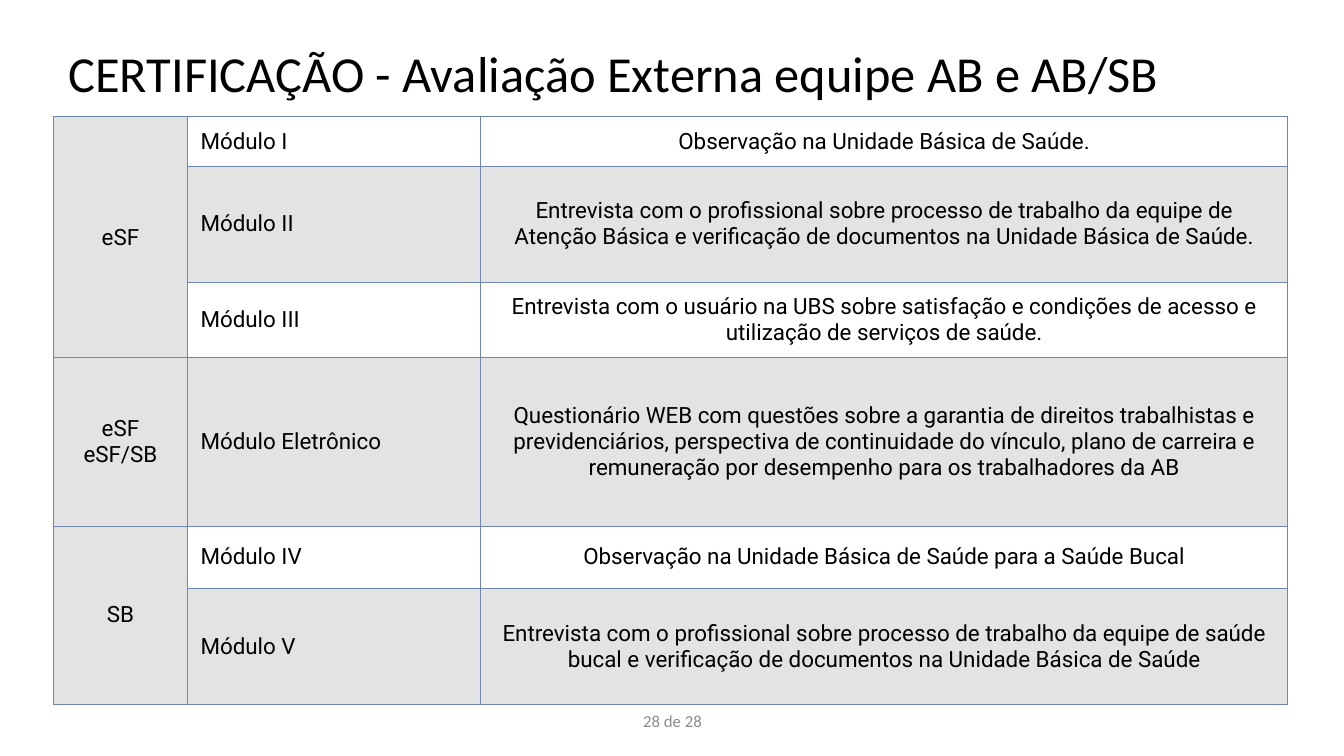
import pptx
import pptx.util
import pptx.dml.color
import pptx.enum.text
import pptx.oxml
import pptx.oxml.ns
from dataclasses import dataclass
from lxml import etree

Inches = pptx.util.Inches
Pt = pptx.util.Pt
Align = pptx.enum.text.PP_ALIGN
Anchor = pptx.enum.text.MSO_ANCHOR
qn = pptx.oxml.ns.qn


@dataclass(frozen=True)
class Theme:
    ink: str = "000000"
    muted: str = "8C8C8C"
    edge: str = "6E86B6"
    shade: int = 11  # percent of ink
    head: str = "Calibri"
    body: str = "Roboto"
    big: int = 36
    mid: int = 16
    small: int = 12


THEME = Theme()

COLS = [1.33, 2.91, 8]
ROWS = [0.49, 1.15, 0.75, 1.67, 0.62, 1.15]

# First row, row count, lines
TEAMS = [
    (0, 3, ["eSF"]),
    (3, 1, ["eSF", "eSF/SB"]),
    (4, 2, ["SB"]),
]

# Module, description; every second row is shaded
MODULES = [
    ("Módulo I", "Observação na Unidade Básica de Saúde."),
    ("Módulo II", "Entrevista com o profissional sobre processo de trabalho da "
     "equipe de Atenção Básica e verificação de documentos na Unidade Básica "
     "de Saúde."),
    ("Módulo III", "Entrevista com o usuário na UBS sobre satisfação e "
     "condições de acesso e utilização de serviços de saúde."),
    ("Módulo Eletrônico", "Questionário WEB com questões sobre a garantia de "
     "direitos trabalhistas e previdenciários, perspectiva de continuidade do "
     "vínculo, plano de carreira e remuneração por desempenho para os "
     "trabalhadores da AB"),
    ("Módulo IV", "Observação na Unidade Básica de Saúde para a Saúde Bucal"),
    ("Módulo V", "Entrevista com o profissional sobre processo de trabalho da "
     "equipe de saúde bucal e verificação de documentos na Unidade Básica de "
     "Saúde"),
]


def rgb(code):
    return pptx.dml.color.RGBColor.from_string(code)


def write(frame, lines, size, face, color, align):
    for i, line in enumerate(lines):
        para = frame.paragraphs[0] if i == 0 else frame.add_paragraph()
        para.alignment = align
        run = para.add_run()
        run.text = line
        run.font.size = Pt(size)
        run.font.name = face
        run.font.color.rgb = rgb(color)


def add_text(slide, place, text, size, color, align, anchor, pad):
    frame = slide.shapes.add_textbox(*map(Inches, place)).text_frame
    frame.word_wrap = True
    frame.vertical_anchor = anchor
    frame.margin_left = frame.margin_right = Inches(pad[0])
    frame.margin_top = frame.margin_bottom = Inches(pad[1])
    write(frame, [text], size, THEME.head, color, align)
    return frame


def add_edges(cell):
    props = cell._tc.get_or_add_tcPr()
    for side in ("lnL", "lnR", "lnT", "lnB"):
        line = etree.SubElement(props, qn("a:" + side), w=str(Pt(0.75)))
        fill = etree.SubElement(line, qn("a:solidFill"))
        etree.SubElement(fill, qn("a:srgbClr"), val=THEME.edge)


def paint(cell, shaded):
    if not shaded:
        cell.fill.background()
        return
    cell.fill.solid()
    cell.fill.fore_color.rgb = rgb(THEME.ink)
    color = cell._tc.tcPr.find(qn("a:solidFill")).find(qn("a:srgbClr"))
    etree.SubElement(color, qn("a:alpha"), val=str(THEME.shade * 1000))


def fill_cell(cell, lines, align):
    cell.vertical_anchor = Anchor.MIDDLE
    cell.margin_left = cell.margin_right = Inches(0.13)
    cell.margin_top = cell.margin_bottom = Inches(0.1)
    write(cell.text_frame, lines, THEME.mid, THEME.body, THEME.ink, align)


def add_grid(slide, left, top):
    table = slide.shapes.add_table(
        len(ROWS), len(COLS), Inches(left), Inches(top),
        Inches(sum(COLS)), Inches(sum(ROWS))).table
    table.first_row = table.horz_banding = False
    for col, width in zip(table.columns, COLS):
        col.width = Inches(width)
    for row, height in zip(table.rows, ROWS):
        row.height = Inches(height)

    # Borders and shading
    for r in range(len(ROWS)):
        for c in range(len(COLS)):
            cell = table.cell(r, c)
            add_edges(cell)
            paint(cell, c == 0 or r % 2 == 1)

    # Teams
    for start, count, lines in TEAMS:
        cell = table.cell(start, 0)
        if count > 1:
            cell.merge(table.cell(start + count - 1, 0))
        fill_cell(cell, lines, Align.CENTER)

    # Modules
    for r, (name, about) in enumerate(MODULES):
        fill_cell(table.cell(r, 1), [name], Align.LEFT)
        fill_cell(table.cell(r, 2), [about], Align.CENTER)


def main():
    deck = pptx.Presentation()
    deck.slide_width = Inches(13.33)
    deck.slide_height = Inches(7.5)
    slide = deck.slides.add_slide(deck.slide_layouts[6])

    # Title
    title = add_text(slide, (0.55, 0.1, 12.66, 1.06),
                     "CERTIFICAÇÃO - Avaliação Externa equipe AB e AB/SB",
                     THEME.big, THEME.ink, Align.LEFT, Anchor.BOTTOM,
                     (0.13, 0.13))
    title.paragraphs[0].line_spacing = 0.9

    # Table
    add_grid(slide, 0.53, 1.16)

    # Page number
    add_text(slide, (4.42, 6.95, 4.5, 0.4), "28 de 28", THEME.small,
             THEME.muted, Align.CENTER, Anchor.MIDDLE, (0.1, 0.05))

    deck.save("out.pptx")


if __name__ == "__main__":
    main()
